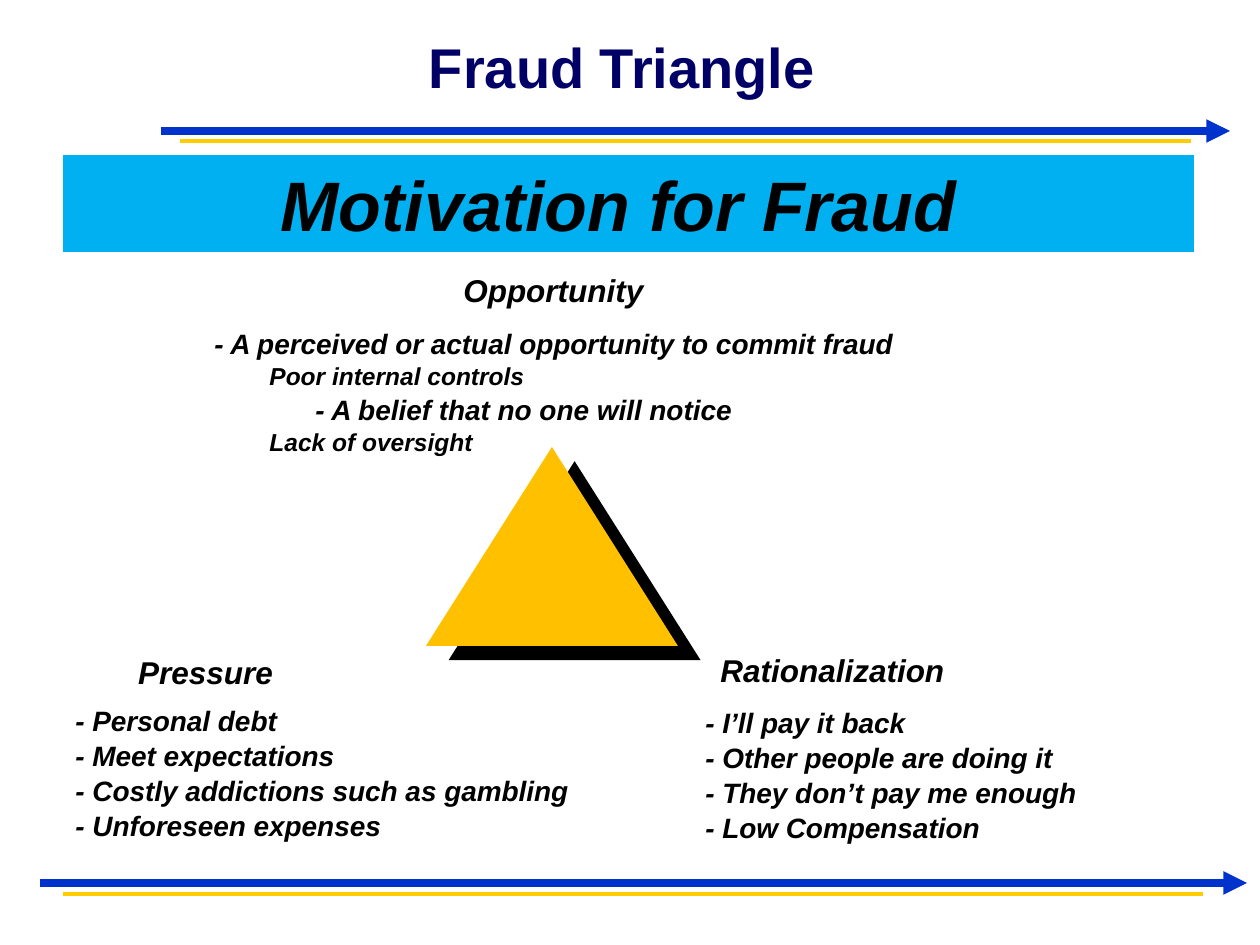
from lxml.etree import SubElement
from pptx import Presentation
from pptx.dml.color import RGBColor
from pptx.enum.shapes import MSO_CONNECTOR, MSO_SHAPE
from pptx.enum.text import MSO_ANCHOR, PP_ALIGN
from pptx.oxml.ns import qn
from pptx.util import Emu, Pt

PX = 914400 // 126
COLORS = {
    "title": "000066",
    "text": "000000",
    "arrow": "0033CC",
    "underline": "FFCC00",
    "banner": "00B0F0",
    "triangle": "FFC000",
    "shadow": "000000",
}


def px(value):
    return Emu(value * PX)


def color(name):
    return RGBColor.from_string(COLORS[name])


def style(paragraph, size, color_name="text", italic=True):
    font = paragraph.font
    font.name = "Arial"
    font.size = Pt(size)
    font.bold = True
    font.italic = italic
    font.color.rgb = color(color_name)


def add_line(slide, start, end, y, color_name, width, arrow=False):
    line = slide.shapes.add_connector(
        MSO_CONNECTOR.STRAIGHT, px(start), px(y), px(end), px(y))
    line.line.color.rgb = color(color_name)
    line.line.width = Pt(width)
    if arrow:
        SubElement(line.line._get_or_add_ln(), qn("a:tailEnd"), type="triangle")
    SubElement(line._element.spPr, qn("a:effectLst"))


def add_rule(slide, start, end, y, underline_start, underline_end, gap):
    """Draw a blue arrow with a thin yellow line below it."""
    add_line(slide, start, end, y, "arrow", 4.5, arrow=True)
    add_line(slide, underline_start, underline_end, y + gap, "underline", 2.25)


def add_text_box(slide, left, top, width, height):
    box = slide.shapes.add_textbox(px(left), px(top), px(width), px(height))
    box.text_frame.word_wrap = True
    return box.text_frame


def add_title(slide, text):
    frame = add_text_box(slide, 423, 32, 721, 68)
    frame.margin_left = frame.margin_right = px(6)
    frame.margin_top = frame.margin_bottom = 0
    frame.vertical_anchor = MSO_ANCHOR.MIDDLE
    paragraph = frame.paragraphs[0]
    paragraph.text = text
    style(paragraph, 32, "title", italic=False)


def add_heading(slide, text, left, top, width):
    paragraph = add_text_box(slide, left, top, width, 50).paragraphs[0]
    paragraph.text = text
    paragraph.alignment = PP_ALIGN.CENTER
    style(paragraph, 18)


def add_points(slide, points, left, top, width, height):
    """Add one paragraph per (text, size, indent) point."""
    frame = add_text_box(slide, left, top, width, height)
    for index, (text, size, indent) in enumerate(points):
        paragraph = frame.add_paragraph() if index else frame.paragraphs[0]
        paragraph.text = text
        paragraph.line_spacing = 1.04
        if indent:
            paragraph._p.get_or_add_pPr().set("marL", str(px(indent)))
        style(paragraph, size)


def add_filled_shape(slide, kind, left, top, width, height, color_name):
    shape = slide.shapes.add_shape(kind, px(left), px(top), px(width), px(height))
    shape.shadow.inherit = False
    shape.fill.solid()
    shape.fill.fore_color.rgb = color(color_name)
    shape.line.fill.background()
    return shape


def add_triangle(slide):
    triangle = add_filled_shape(
        slide, MSO_SHAPE.ISOSCELES_TRIANGLE, 426, 447, 252, 199, "triangle")
    effects = triangle._element.spPr.find(qn("a:effectLst"))
    shadow = SubElement(effects, qn("a:outerShdw"), dist=str(Pt(15.3)),
                        dir=str(32 * 60000), algn="ctr", rotWithShape="0")
    SubElement(shadow, qn("a:srgbClr"), val=COLORS["shadow"])


def add_banner(slide, text):
    banner = add_filled_shape(
        slide, MSO_SHAPE.RECTANGLE, 63, 155, 1131, 97, "banner")
    frame = banner.text_frame
    frame.margin_right = px(32)
    frame.vertical_anchor = MSO_ANCHOR.MIDDLE
    paragraph = frame.paragraphs[0]
    paragraph.text = text
    paragraph.alignment = PP_ALIGN.CENTER
    style(paragraph, 40)


def main():
    presentation = Presentation()
    presentation.slide_width = px(1260)
    presentation.slide_height = px(945)
    slide = presentation.slides.add_slide(presentation.slide_layouts[6])

    add_rule(slide, 161, 1230, 131, 180, 1191, 10)
    add_rule(slide, 40, 1247, 883, 63, 1203, 11)
    add_title(slide, "Fraud Triangle")

    add_heading(slide, "Opportunity", 76, 265, 955)
    add_points(slide, [
        ("- A perceived or actual opportunity to commit fraud", 16, 8),
        ("Poor internal controls", 14, 63),
        ("- A belief that no one will notice", 16, 109),
        ("Lack of oversight", 14, 63),
    ], 194, 319, 838, 144)

    add_heading(slide, "Pressure", 0, 647, 411)
    pressures = ["- Personal debt", "- Meet expectations",
                 "- Costly addictions such as gambling", "- Unforeseen expenses"]
    add_points(slide, [(text, 16, 0) for text in pressures], 63, 696, 566, 152)

    add_heading(slide, "Rationalization", 481, 645, 703)
    excuses = ["- I’ll pay it back", "- Other people are doing it",
               "- They don’t pay me enough", "- Low Compensation"]
    add_points(slide, [(text, 16, 0) for text in excuses], 693, 698, 507, 149)

    add_triangle(slide)
    add_banner(slide, "Motivation for Fraud")
    presentation.save("out.pptx")


if __name__ == "__main__":
    main()
